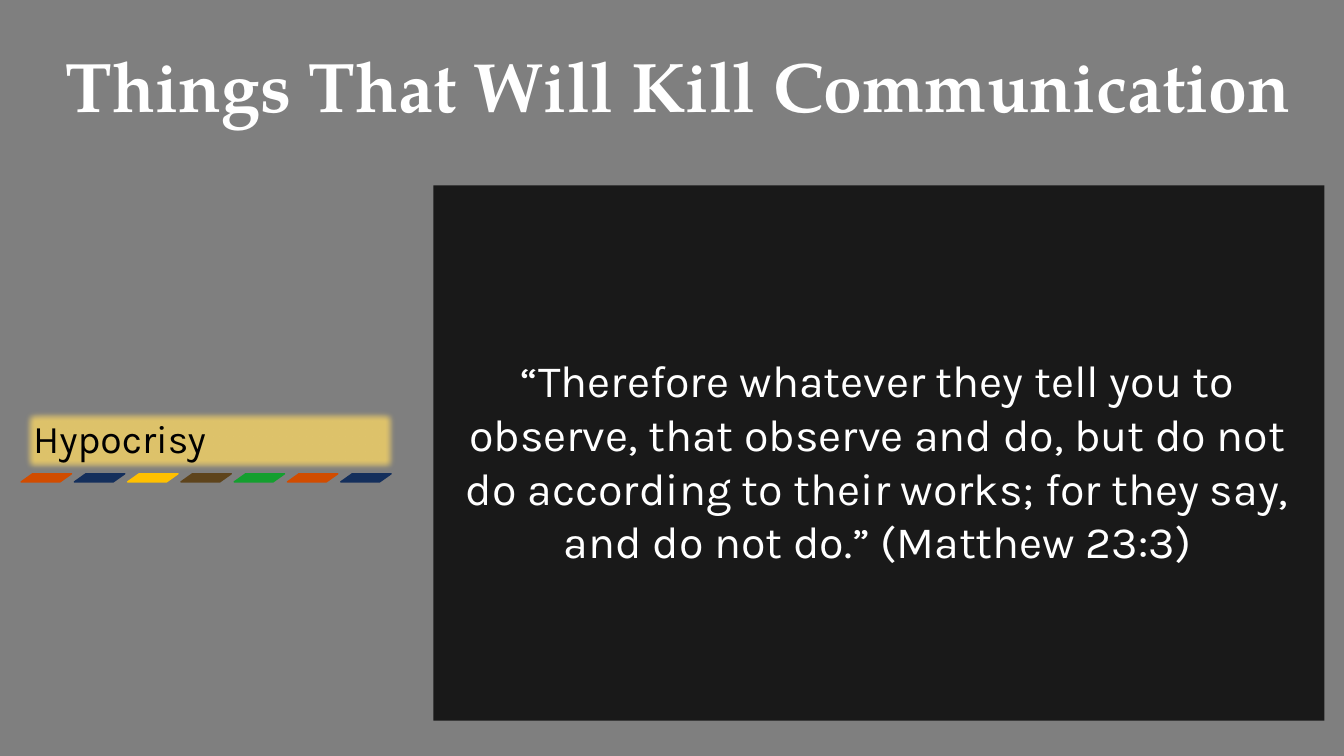
"""Builds a slide on hypocrisy as a killer of communication."""
from lxml import etree
from pptx import Presentation
from pptx.dml import color
from pptx.enum import shapes, text
from pptx.oxml import ns
from pptx.util import Pt

HEADING = "Things That Will Kill Communication"
TOPIC = "Hypocrisy"
VERSE = (
    "“Therefore whatever they tell you to observe, that observe and do, but do not "
    "do according to their works; for they say, and do not do.” (Matthew 23:3)"
)
COLORS = {
    "black": "000000", "white": "FFFFFF", "label": "FFD966", "orange": "D14C00",
    "navy": "142F5C", "gold": "FFC000", "brown": "5E441C", "green": "149F2F",
}
STRIPES = ["orange", "navy", "gold", "brown", "green", "orange", "navy"]
WIDTH, HEIGHT = 960, 540
BACKDROPS = [((0, 0, WIDTH, HEIGHT), 50), ((309.6, 132.5, 636.5, 382.3), 80)]
HEADING_BOX = (27.4, 18.7, 914.4, 72.7)
VERSE_BOX = (313.2, 133.2, 627.8, 377.3)
TOPIC_BOX = (15.1, 290.9, 269.3, 47.5)
STRIPE_STEP, STRIPE_WIDTH, STRIPE_HEIGHT, STRIPE_SLANT = 38.05, 36, 5.8, 1.41


def rgb(name):
    return color.RGBColor.from_string(COLORS[name])


def place(part, box):
    part.left, part.top, part.width, part.height = map(Pt, box)


def add_block(parent, kind, box, fill, opacity=100):
    block = parent.add_shape(kind, *map(Pt, box))
    block.shadow.inherit = False
    block.fill.solid()
    block.fill.fore_color.rgb = rgb(fill)
    block.line.fill.background()
    if opacity < 100:
        tint = block.element.spPr.find(".//" + ns.qn("a:srgbClr"))
        etree.SubElement(tint, ns.qn("a:alpha"), val=str(opacity * 1000))
    return block


def write(part, words, font, size, ink, align, anchor, insets, spacing=1.0, after=0, bold=False):
    frame = part.text_frame
    frame.word_wrap = True
    frame.auto_size = text.MSO_AUTO_SIZE.NONE
    frame.vertical_anchor = anchor
    frame.margin_left, frame.margin_top, frame.margin_right, frame.margin_bottom = map(Pt, insets)
    frame.text = words
    line = frame.paragraphs[0]
    line.alignment = align
    line.line_spacing = spacing
    line.space_before, line.space_after = Pt(0), Pt(after)
    properties = line._p.get_or_add_pPr()
    properties.set("marL", "0")
    properties.set("indent", "0")
    etree.SubElement(properties, ns.qn("a:buNone"))
    line.font.name, line.font.size, line.font.bold = font, Pt(size), bold
    line.font.color.rgb = rgb(ink)


def main():
    deck = Presentation()
    deck.slide_width, deck.slide_height = Pt(WIDTH), Pt(HEIGHT)
    slide = deck.slides.add_slide(deck.slide_layouts[1])
    rect = shapes.MSO_SHAPE.RECTANGLE
    align, anchor = text.PP_ALIGN, text.MSO_ANCHOR

    for box, opacity in BACKDROPS:
        add_block(slide.shapes, rect, box, "black", opacity)

    heading, verse = slide.shapes.title, slide.placeholders[1]
    for part, box in ((heading, HEADING_BOX), (verse, VERSE_BOX)):
        place(part, box)
        part.element.getparent().append(part.element)
    write(heading, HEADING, "TeX Gyre Pagella", 50, "white", align.CENTER, anchor.BOTTOM,
          (0, 0, 0, 0), spacing=0.9, bold=True)
    write(verse, VERSE, "Karla", 32, "white", align.CENTER, anchor.TOP, (7.2, 118.8, 7.2, 3.6))

    banner = slide.shapes.add_group_shape().shapes
    glow = add_block(banner, rect, TOPIC_BOX, "label", 75)
    effects = glow.element.spPr.find(ns.qn("a:effectLst"))
    etree.SubElement(effects, ns.qn("a:softEdge"), rad=str(Pt(5)))
    topic = banner.add_textbox(*map(Pt, TOPIC_BOX))
    write(topic, TOPIC, "Karla", 28, "black", align.LEFT, anchor.BOTTOM,
          (8.6, 8.6, 8.6, 8.6), spacing=0.9, after=24)

    left, top, _, height = TOPIC_BOX
    for index, shade in enumerate(STRIPES):
        box = (left + index * STRIPE_STEP, top + height, STRIPE_WIDTH, STRIPE_HEIGHT)
        stripe = add_block(banner, shapes.MSO_SHAPE.PARALLELOGRAM, box, shade)
        stripe.adjustments[0] = STRIPE_SLANT
        stripe.line.color.rgb = rgb(shade)
        stripe.line.width = Pt(1)

    deck.save("out.pptx")


if __name__ == "__main__":
    main()
